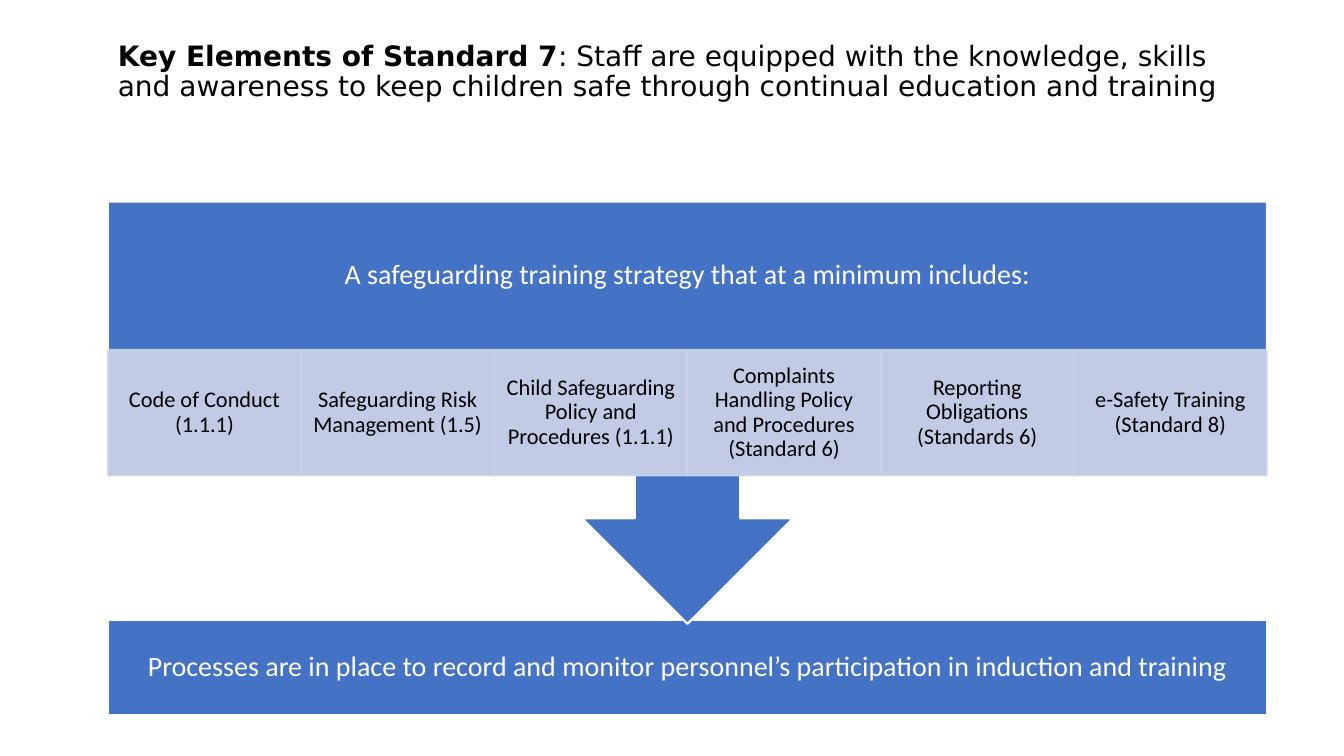
"""Build the slide on the key elements of Standard 7."""
from pptx import Presentation
from pptx import util as u
from pptx.dml.color import RGBColor
from pptx.enum import shapes, text
from pptx.oxml.ns import qn
from lxml import etree


def rgb(value):
    return RGBColor.from_string(value)


class Board:
    BLUE, PALE, WHITE, BLACK = "4472C4", "CFD5EA", "FFFFFF", "000000"
    BODY, HEADING = "Calibri", "DejaVu Sans"

    def __init__(self, slide):
        self.slide = slide

    def set_words(self, frame, runs, size, color, font=BODY, insets=(0.4, 0.4),
                  align=text.PP_ALIGN.CENTER):
        frame.word_wrap = True
        frame.vertical_anchor = text.MSO_ANCHOR.MIDDLE
        frame.margin_left = frame.margin_right = u.Cm(insets[0])
        frame.margin_top = frame.margin_bottom = u.Cm(insets[1])
        paragraph = frame.paragraphs[0]
        paragraph.alignment = align
        paragraph.line_spacing = 0.9
        for words, bold in runs:
            run = paragraph.add_run()
            run.text = words
            run.font.size = u.Pt(size)
            run.font.name = font
            run.font.bold = bold
            run.font.color.rgb = rgb(color)

    def label(self, box, runs, color, **style):
        area = self.slide.shapes.add_textbox(*map(u.Cm, box))
        self.set_words(area.text_frame, runs, 20, color, **style)

    def block(self, kind, box, fill, line, weight):
        block = self.slide.shapes.add_shape(kind, *map(u.Cm, box))
        block.shadow.inherit = False
        block.fill.solid()
        block.fill.fore_color.rgb = rgb(fill)
        block.line.color.rgb = rgb(line)
        block.line.width = u.Pt(weight)
        return block

    def panel(self, box, words):
        panel = self.block(shapes.MSO_SHAPE.RECTANGLE, box, self.BLUE, self.WHITE, 1.5)
        self.set_words(panel.text_frame, [(words, False)], 20, self.WHITE)

    def callout(self, box):
        callout = self.block(shapes.MSO_SHAPE.UP_ARROW_CALLOUT, box, self.BLUE, self.WHITE, 1.5)
        callout.rotation = 180

    def topic(self, box, words):
        topic = self.block(shapes.MSO_SHAPE.RECTANGLE, box, self.PALE, self.PALE, 1)
        for color in topic.element.spPr.iter(qn("a:srgbClr")):
            etree.SubElement(color, qn("a:alpha")).set("val", "90000")
        self.set_words(topic.text_frame, [(words, False)], 16, self.BLACK, insets=(0.3, 0.05))


def main():
    deck = Presentation()
    deck.slide_width, deck.slide_height = u.Cm(33.87), u.Cm(19.05)
    board = Board(deck.slides.add_slide(deck.slide_layouts[6]))
    left, width = 2.72, 29.21

    board.label((left, 1.02, width, 1.6), [
        ("Key Elements of Standard 7", True),
        (": Staff are equipped with the knowledge, skills and awareness to keep "
         "children safe through continual education and training", False),
    ], board.BLACK, font=board.HEADING, insets=(0.25, 0.13), align=text.PP_ALIGN.LEFT)

    board.panel((left, 15.62, width, 2.41),
                "Processes are in place to record and monitor personnel’s "
                "participation in induction and training")
    board.callout((left, 5.08, width, 10.64))
    board.label((left, 5.08, width, 3.73),
                [("A safeguarding training strategy that at a minimum includes:", False)],
                board.WHITE)

    topics = [
        "Code of Conduct (1.1.1)",
        "Safeguarding Risk Management (1.5)",
        "Child Safeguarding Policy and Procedures (1.1.1)",
        "Complaints Handling Policy and Procedures (Standard 6)",
        "Reporting Obligations (Standards 6)",
        "e-Safety Training (Standard 8)",
    ]
    topic_width = width / len(topics)
    for column, words in enumerate(topics):
        board.topic((left + column * topic_width, 8.81, topic_width, 3.18), words)

    deck.save("out.pptx")


if __name__ == "__main__":
    main()
